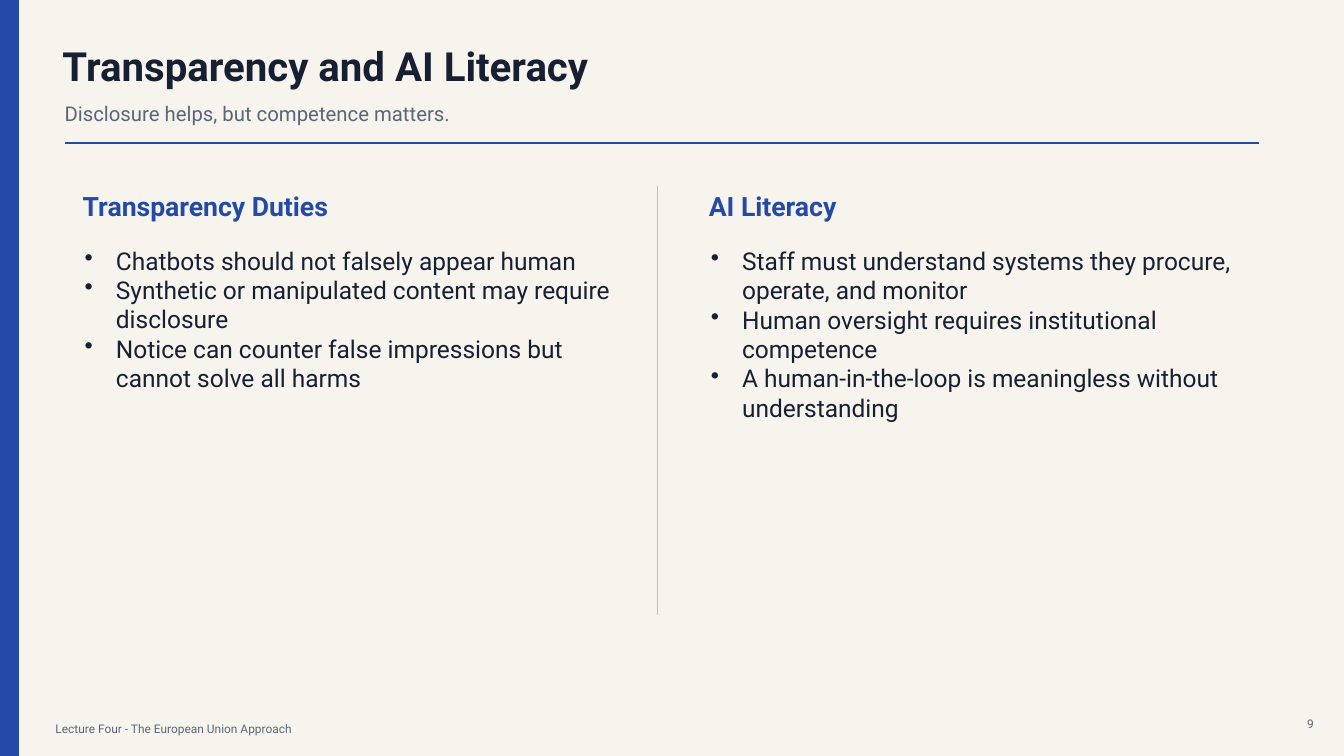
from lxml import etree
from pptx import Presentation
from pptx import util as u
from pptx.dml.color import RGBColor
from pptx.enum import shapes, text
from pptx.oxml import ns

FONT = "Roboto"
BLUE, INK, GREY = "244AA5", "172033", "5B657A"
CREAM, SAND = "F7F4EE", "C9BDAE"
WIDTH, HEIGHT = 13.33, 7.5
BULLET_INDENT = 0.31


def color(hex_string):
    return RGBColor.from_string(hex_string)


def add_bullet(paragraph):
    properties = paragraph._p.get_or_add_pPr()
    indent = u.Inches(BULLET_INDENT)
    properties.set("marL", str(indent))
    properties.set("indent", str(-indent))
    etree.SubElement(properties, ns.qn("a:buChar"), char="•")


def add_text(slide, box, *lines, size, fill, bold=False, align=None, bullets=False):
    shape = slide.shapes.add_textbox(*map(u.Inches, box))
    frame = shape.text_frame
    frame.word_wrap = True
    frame.vertical_anchor = text.MSO_ANCHOR.MIDDLE
    frame.margin_left = frame.margin_top = frame.margin_right = frame.margin_bottom = 0
    frame.text = "\n".join(lines)
    for paragraph in frame.paragraphs:
        if bullets:
            add_bullet(paragraph)
        if align is not None:
            paragraph.alignment = align
        for run in paragraph.runs:
            font = run.font
            font.name, font.size, font.bold = FONT, u.Pt(size), bold
            font.color.rgb = color(fill)


def add_line(slide, start, end, stroke, width):
    line = slide.shapes.add_connector(
        shapes.MSO_CONNECTOR.STRAIGHT, *map(u.Inches, (*start, *end)))
    line.line.color.rgb = color(stroke)
    line.line.width = u.Pt(width)
    etree.SubElement(line._element.spPr, ns.qn("a:effectLst"))


def add_side_bar(slide, box):
    shape = slide.shapes.add_shape(shapes.MSO_SHAPE.RECTANGLE, *map(u.Inches, box))
    shape.shadow.inherit = False
    shape.fill.solid()
    shape.fill.fore_color.rgb = color(BLUE)
    shape.line.color.rgb = color(BLUE)
    shape.line.width = u.Pt(1)


def add_header(slide, box, title, subtitle):
    left, top, width, height = box
    add_text(slide, (left - 0.02, top, 9.8, 0.45), title, size=28.7, fill=INK, bold=True)
    add_text(slide, (left, top + 0.53, 10.9, 0.35), subtitle, size=14.5, fill=GREY)
    bottom = top + height
    add_line(slide, (left, bottom), (left + width, bottom), BLUE, 1.25)


def add_column(slide, box, heading, points):
    left, top, width, height = box
    add_text(slide, (left, top, width, 0.32), heading, size=19, fill=BLUE, bold=True)
    add_text(slide, (left + 0.02, top + 0.5, width - 0.1, height - 0.5), *points,
             size=17.5, fill=INK, bullets=True)


def add_footer(slide, box, label, number):
    left, top, width, height = box
    add_text(slide, (left, top + 0.05, 9, height), label, size=8.5, fill=GREY)
    add_text(slide, (left + width - 0.28, top, 0.28, height), number,
             size=8.5, fill=GREY, align=text.PP_ALIGN.RIGHT)


def build_two_column_slide(presentation):
    slide = presentation.slides.add_slide(presentation.slide_layouts[6])
    background = slide.background.fill
    background.solid()
    background.fore_color.rgb = color(CREAM)

    # Frame of the slide
    add_side_bar(slide, (0, 0, 0.18, HEIGHT))
    add_footer(slide, (0.55, 7.08, 12.48, 0.2),
               "Lecture Four - The European Union Approach", "9")
    add_header(slide, (0.64, 0.42, 11.85, 1),
               "Transparency and AI Literacy",
               "Disclosure helps, but competence matters.")

    # Two columns with a divider
    add_column(slide, (0.82, 1.88, 5.35, 2.07), "Transparency Duties", [
        "Chatbots should not falsely appear human",
        "Synthetic or manipulated content may require disclosure",
        "Notice can counter false impressions but cannot solve all harms",
    ])
    add_line(slide, (6.52, 1.85), (6.52, 6.1), SAND, 1)
    add_column(slide, (7.03, 1.88, 5.35, 2.37), "AI Literacy", [
        "Staff must understand systems they procure, operate, and monitor",
        "Human oversight requires institutional competence",
        "A human-in-the-loop is meaningless without understanding",
    ])


def main():
    presentation = Presentation()
    presentation.slide_width = u.Inches(WIDTH)
    presentation.slide_height = u.Inches(HEIGHT)
    build_two_column_slide(presentation)
    presentation.save("out.pptx")


if __name__ == "__main__":
    main()
